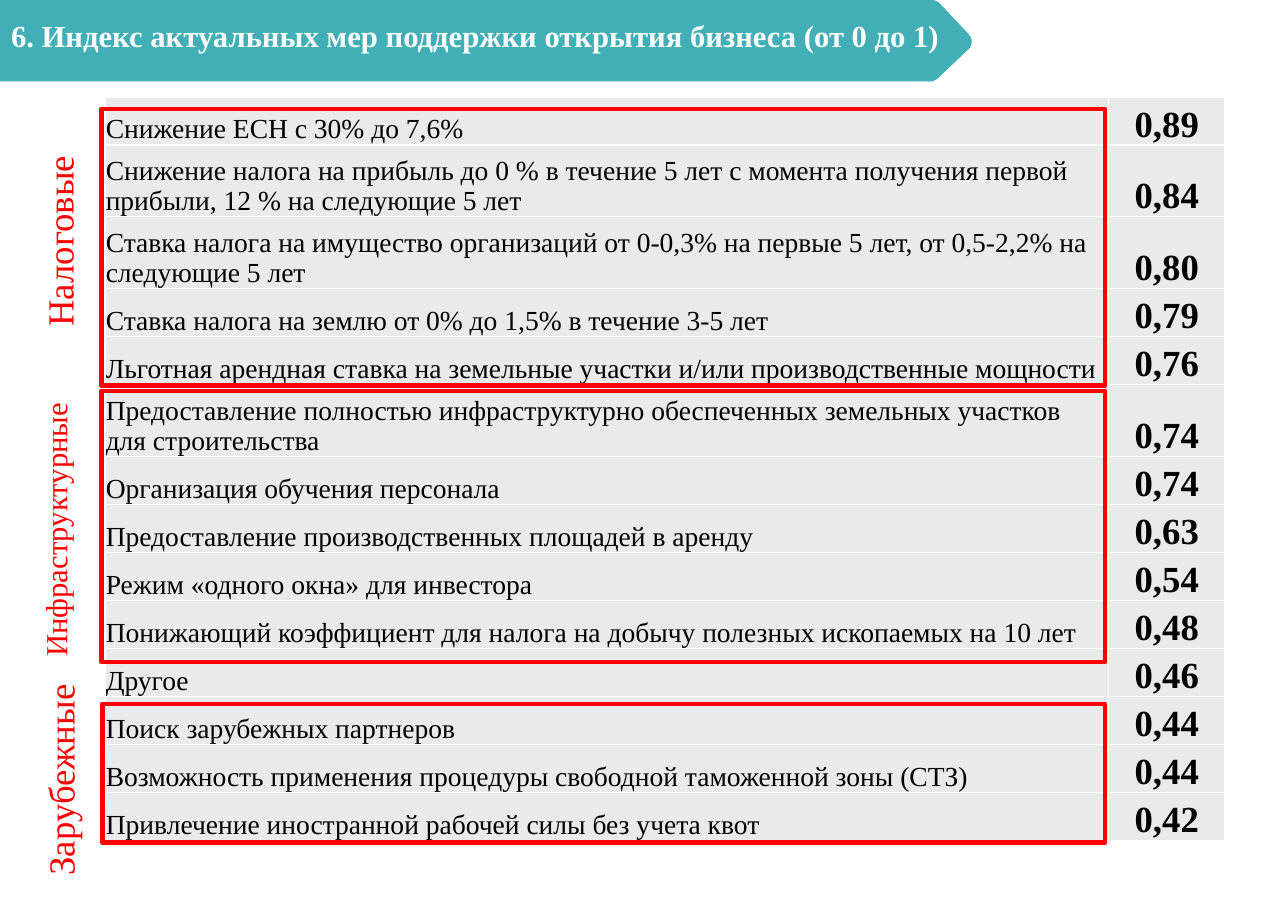
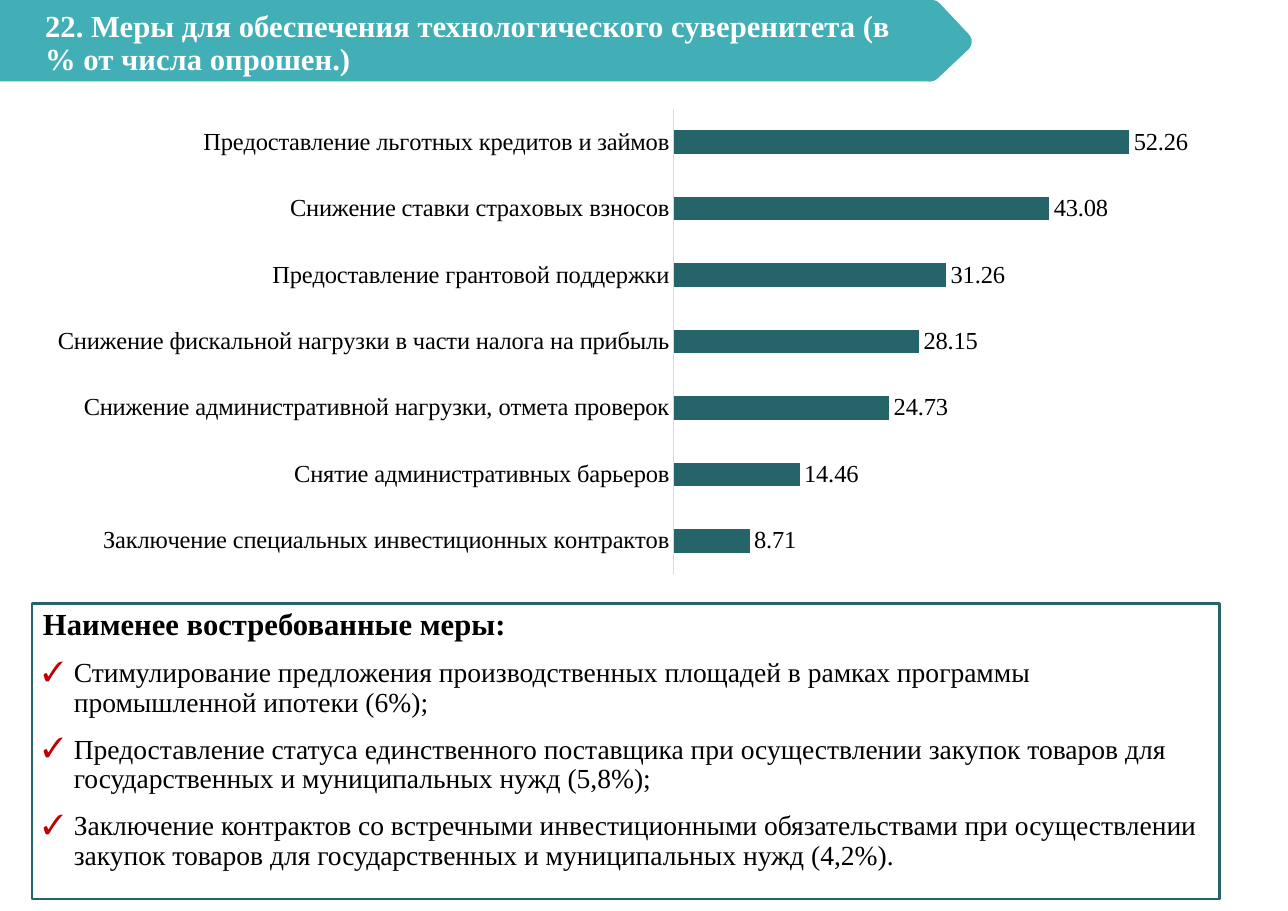
"""Builds two survey slides: a table of support measures and a bar chart."""
from pptx import Presentation
from pptx.chart.data import CategoryChartData as ChartData
from pptx.dml.color import RGBColor
from pptx.enum.chart import XL_CHART_TYPE as Chart, XL_LABEL_POSITION as Spot, XL_TICK_MARK as Tick
from pptx.enum.shapes import MSO_SHAPE as Shape
from pptx.enum.text import MSO_ANCHOR as Anchor, MSO_AUTO_SIZE as Fit, PP_ALIGN as Align
from pptx.oxml import parse_xml
from pptx.oxml.ns import nsdecls
from pptx.util import Inches, Pt

FONT = "Times New Roman"
TEAL, DARK, GREY, RULE = "41AFB5", "256569", "E8EAEB", "D9D9D9"
RED, CHECK, BLACK, WHITE = "FF0000", "C00000", "000000", "FFFFFF"

ROWS = [
    ("Снижение ЕСН с 30% до 7,6%", "0,89", 2),
    ("Снижение налога на прибыль до 0 % в течение 5 лет с момента получения первой "
     "прибыли, 12 % на следующие 5 лет", "0,84", 3),
    ("Ставка налога на имущество организаций от 0-0,3% на первые 5 лет, "
     "от 0,5-2,2% на следующие 5 лет", "0,80", 3),
    ("Ставка налога на землю от 0% до 1,5% в течение 3-5 лет", "0,79", 2),
    ("Льготная арендная ставка на земельные участки и/или производственные мощности", "0,76", 2),
    ("Предоставление полностью инфраструктурно обеспеченных земельных участков "
     "для строительства", "0,74", 3),
    ("Организация обучения персонала", "0,74", 2),
    ("Предоставление производственных площадей в аренду", "0,63", 2),
    ("Режим «одного окна» для инвестора", "0,54", 2),
    ("Понижающий коэффициент для налога на добычу полезных ископаемых на 10 лет", "0,48", 2),
    ("Другое", "0,46", 2),
    ("Поиск зарубежных партнеров", "0,44", 2),
    ("Возможность применения процедуры свободной таможенной зоны (СТЗ)", "0,44", 2),
    ("Привлечение иностранной рабочей силы без учета квот", "0,42", 2),
]
GROUPS = [
    ("Налоговые", 24, (-0.35, 1.94, 1.77, 0.5), (0.92, 0.99, 9.11, 2.51)),
    ("Инфраструктурные", 20, (-0.8, 4.59, 2.61, 0.44), (0.92, 3.55, 9.11, 2.46)),
    ("Зарубежные", 24, (-0.43, 6.83, 1.95, 0.5), (0.93, 6.39, 9.1, 1.26)),
]
BARS = [
    ("Заключение специальных инвестиционных контрактов", 8.71),
    ("Снятие административных барьеров", 14.46),
    ("Снижение административной нагрузки, отмета проверок", 24.73),
    ("Снижение фискальной нагрузки в части налога на прибыль", 28.15),
    ("Предоставление грантовой поддержки", 31.26),
    ("Снижение ставки страховых взносов", 43.08),
    ("Предоставление льготных кредитов и займов", 52.26),
]
LEAST = [
    "Стимулирование предложения производственных площадей в рамках программы "
    "промышленной ипотеки (6%);",
    "Предоставление статуса единственного поставщика при осуществлении закупок товаров "
    "для государственных и муниципальных нужд (5,8%);",
    "Заключение контрактов со встречными инвестиционными обязательствами при осуществлении "
    "закупок товаров для государственных и муниципальных нужд (4,2%).",
]


def color(code):
    """Turn a hex string into a colour."""
    return RGBColor.from_string(code)


def inches(spot):
    """Turn a row of numbers into lengths."""
    return [Inches(size) for size in spot]


def place(item, spot):
    """Move and size a placeholder."""
    item.left, item.top, item.width, item.height = inches(spot)


def style(font, size, tint, bold=False):
    """Set the face, size, colour and weight of a font."""
    font.name, font.size, font.bold = FONT, Pt(size), bold
    font.color.rgb = color(tint)


def write(para, text, size, tint=BLACK, bold=False):
    """Add one run to a paragraph."""
    run = para.add_run()
    run.text = text
    style(run.font, size, tint, bold)


def draw(slide, kind, spot, fill=None, line=None, turn=0):
    """Add a flat shape with a fill or an outline."""
    item = slide.shapes.add_shape(kind, *inches(spot))
    item.shadow.inherit = False
    item.rotation = turn
    if fill:
        item.fill.solid()
        item.fill.fore_color.rgb = color(fill)
    else:
        item.fill.background()
    if line:
        item.line.color.rgb = color(line)
        item.line.width = Pt(3)
    else:
        item.line.fill.background()
    return item


def add_band(deck, slide):
    """Draw the title band and move it to the master."""
    parts = [
        draw(slide, Shape.RECTANGLE, (0, 0, 8.45, 0.74), TEAL),
        draw(slide, Shape.ROUNDED_RECTANGLE, (8.16, 0.08, 0.58, 0.58), TEAL, turn=46.7),
    ]
    tree = deck.slide_master.shapes._spTree
    for spot, part in enumerate(parts, 2):
        tree.insert(spot, part._element)


def set_frame(item):
    """Give a placeholder fixed, wrapped text from the top."""
    frame = item.text_frame
    frame.auto_size, frame.word_wrap = Fit.NONE, True
    frame.vertical_anchor = Anchor.TOP
    return frame


def add_title(slide, text, spot):
    """Fill the title over the band."""
    place(slide.shapes.title, spot)
    para = set_frame(slide.shapes.title).paragraphs[0]
    para.alignment, para.line_spacing = Align.LEFT, 0.9
    write(para, text, 20, WHITE, True)


def fill_cell(cell, text, size, bold, align):
    """Write a table cell with white borders and a grey fill."""
    cell.margin_left = cell.margin_right = cell.margin_top = cell.margin_bottom = 0
    cell.vertical_anchor = Anchor.BOTTOM
    props = cell._tc.get_or_add_tcPr()
    for side in "LRTB":
        props.append(parse_xml(
            f'<a:ln{side} {nsdecls("a")} w="12700"><a:solidFill>'
            f'<a:srgbClr val="{WHITE}"/></a:solidFill></a:ln{side}>'))
    cell.fill.solid()
    cell.fill.fore_color.rgb = color(GREY)
    para = cell.text_frame.paragraphs[0]
    para.alignment = align
    write(para, text, size, BLACK, bold)


def add_grid(slide, spot):
    """Add the table of measures, rows sized by their share."""
    table = slide.shapes.add_table(len(ROWS), 2, *inches(spot)).table
    table.first_row = table.horz_banding = False
    table.columns[0].width, table.columns[1].width = inches((9.1, 1.06))
    unit = spot[3] / sum(share for _, _, share in ROWS)
    for row, (text, score, share) in zip(table.rows, ROWS):
        row.height = Inches(unit * share)
        fill_cell(row.cells[0], text, 18, False, Align.LEFT)
        fill_cell(row.cells[1], score, 24, True, Align.CENTER)


def add_label(slide, text, size, spot):
    """Add a red label that reads upward."""
    item = slide.shapes.add_textbox(*inches(spot))
    item.rotation = 270
    item.text_frame.word_wrap = False
    para = item.text_frame.paragraphs[0]
    para.alignment = Align.CENTER
    write(para, text, size, RED)


def add_bars(slide, spot):
    """Add the bar chart of measures."""
    data = ChartData(number_format="0.00")
    data.categories = [name for name, _ in BARS]
    data.add_series("Series 1", [value for _, value in BARS])
    chart = slide.shapes.add_chart(Chart.BAR_CLUSTERED, *inches(spot), data).chart
    chart.has_legend = chart.has_title = False
    style(chart.font, 16, BLACK)
    names, scale = chart.category_axis, chart.value_axis
    names.major_tick_mark = names.minor_tick_mark = Tick.NONE
    names.format.line.color.rgb = color(RULE)
    names.format.line.width = Pt(0.75)
    style(names.tick_labels.font, 16, BLACK)
    scale.visible = scale.has_major_gridlines = False
    scale.minimum_scale, scale.maximum_scale = 0, 60
    plot = chart.plots[0]
    plot.gap_width, plot.vary_by_categories = 182, False
    bars = plot.series[0].format.fill
    bars.solid()
    bars.fore_color.rgb = color(DARK)
    plot.has_data_labels = True
    marks = plot.data_labels
    marks.show_value, marks.position = True, Spot.OUTSIDE_END
    marks.number_format, marks.number_format_is_linked = "0.00", False
    style(marks.font, 16, BLACK)


def set_bullet(para, mark=None):
    """Give a paragraph a check mark and hanging indent, or neither."""
    props = para._p.get_or_add_pPr()
    indent = Inches(0.28) if mark else 0
    props.set("marL", str(indent))
    props.set("indent", str(-indent))
    space = nsdecls("a")
    parts = [f"<a:buNone {space}/>"]
    if mark:
        parts = [f'<a:buClr {space}><a:srgbClr val="{CHECK}"/></a:buClr>',
                 f'<a:buFont {space} typeface="Wingdings 2"/>'.replace("Wingdings 2", FONT),
                 f'<a:buChar {space} char="{mark}"/>']
    for part in parts:
        props.append(parse_xml(part))


def add_list(slide, spot):
    """Fill the framed body with a heading and checked points."""
    body = slide.placeholders[1]
    place(body, spot)
    body.line.color.rgb = color(DARK)
    body.line.width = Pt(1.5)
    frame = set_frame(body)
    head = frame.paragraphs[0]
    set_bullet(head)
    head.line_spacing, head.space_before = 0.9, Pt(0)
    write(head, "Наименее востребованные меры:", 20, bold=True)
    for text in LEAST:
        para = frame.add_paragraph()
        set_bullet(para, "✓")
        para.line_spacing, para.space_before = 0.9, Pt(11)
        write(para, text, 18)


def add_index(deck):
    """Build the slide with the index of measures."""
    slide = deck.slides.add_slide(deck.slide_layouts[5])
    add_band(deck, slide)
    add_title(slide, "6. Индекс актуальных мер поддержки открытия бизнеса (от 0 до 1)",
              (0, 0.14, 8.95, 0.45))
    add_grid(slide, (0.96, 0.88, 10.16, 6.75))
    for text, size, spot, frame in GROUPS:
        draw(slide, Shape.RECTANGLE, frame, line=RED)
        add_label(slide, text, size, spot)


def add_needs(deck):
    """Build the slide with the chart and the least wanted measures."""
    slide = deck.slides.add_slide(deck.slide_layouts[1])
    add_title(slide, "22. Меры для обеспечения технологического суверенитета "
              "(в % от числа опрошен.)", (0.31, 0.05, 8.18, 0.54))
    add_bars(slide, (0.31, 0.9, 10.77, 4.4))
    add_list(slide, (0.29, 5.48, 10.78, 2.68))


def main():
    """Build and save the deck."""
    deck = Presentation()
    deck.slide_width, deck.slide_height = inches((11.69, 8.27))
    add_index(deck)
    add_needs(deck)
    deck.save("out.pptx")


if __name__ == "__main__":
    main()
